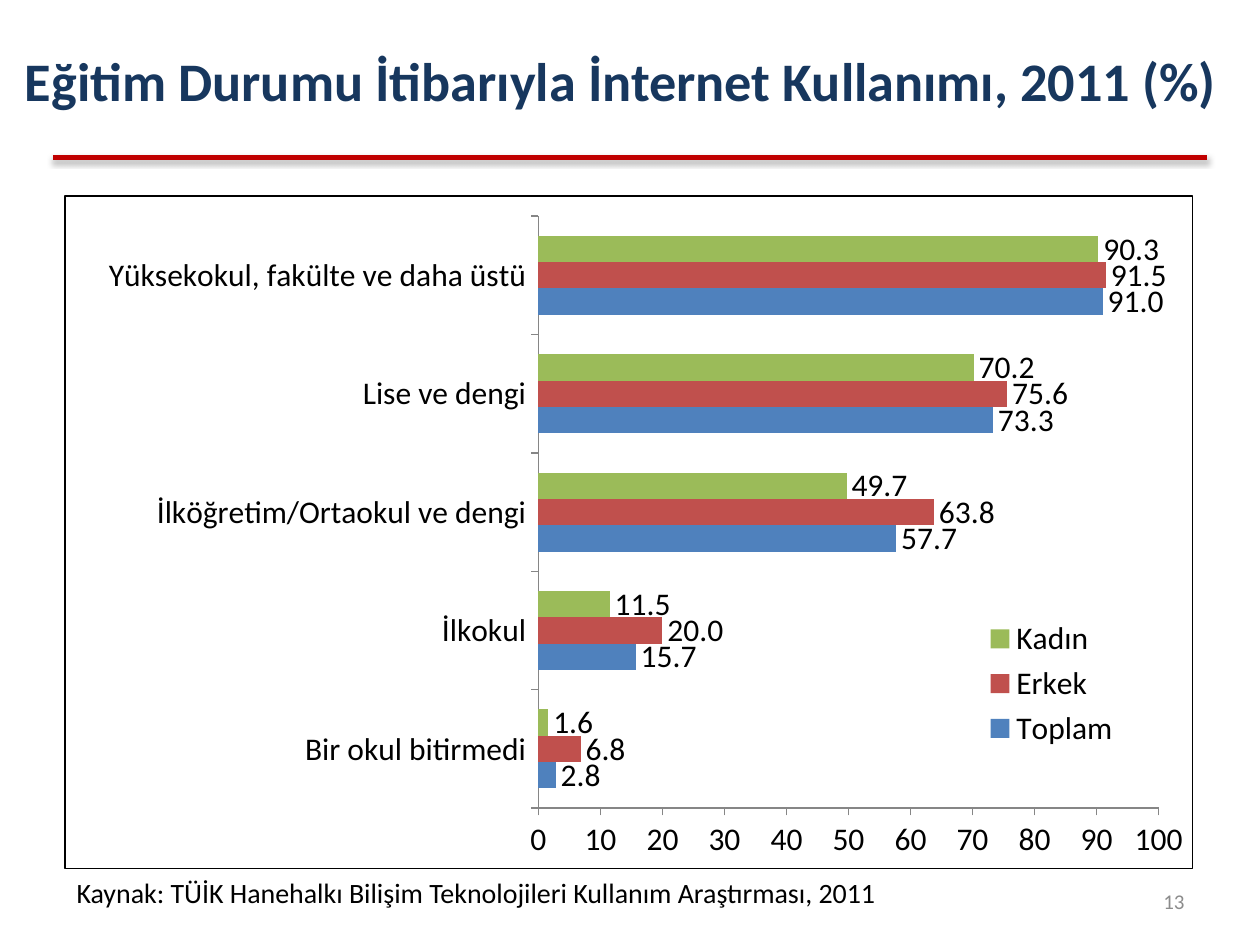
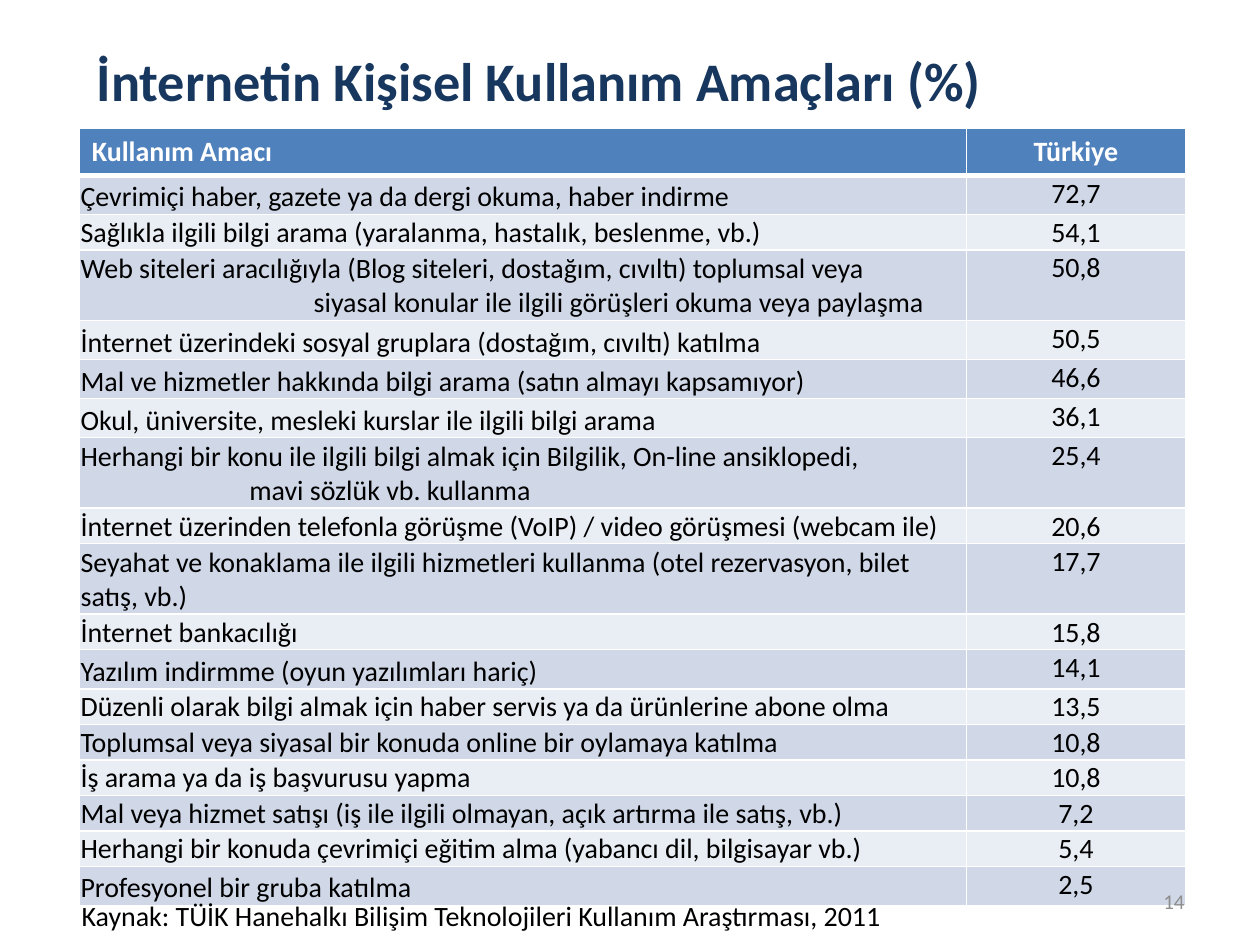
from typing import NamedTuple

from lxml.etree import SubElement
from pptx import Presentation
from pptx.chart.data import CategoryChartData
from pptx.dml.color import RGBColor
from pptx.enum.chart import XL_CHART_TYPE, XL_LABEL_POSITION, XL_LEGEND_POSITION, XL_TICK_MARK
from pptx.enum.shapes import MSO_CONNECTOR
from pptx.enum.text import MSO_ANCHOR, PP_ALIGN
from pptx.oxml import parse_xml
from pptx.oxml.ns import nsdecls, qn
from pptx.util import Inches, Pt

FONT = "Calibri"
WHITE = RGBColor(0xFF, 0xFF, 0xFF)
BLACK = RGBColor(0x00, 0x00, 0x00)
NAVY = RGBColor(0x17, 0x37, 0x5E)
GRAY = RGBColor(0x8C, 0x8C, 0x8C)
AXIS_GRAY = RGBColor(0x86, 0x86, 0x86)
RED = RGBColor(0xC0, 0x00, 0x00)
BLUE = RGBColor(0x4F, 0x81, 0xBD)
BRICK = RGBColor(0xC0, 0x50, 0x4D)
GREEN = RGBColor(0x9B, 0xBB, 0x59)
BANDS = (RGBColor(0xD0, 0xD8, 0xE8), RGBColor(0xE9, 0xED, 0xF4))

SOURCE = "Kaynak: TÜİK Hanehalkı Bilişim Teknolojileri Kullanım Araştırması, 2011"
HEADER, TALL, SHORT, DOUBLE = 0.36, 0.31, 0.28, 0.56


class Box(NamedTuple):
    """A rectangle in inches."""

    left: float
    top: float
    width: float
    height: float

    def lengths(self) -> tuple:
        """Return the four sides as lengths."""
        return tuple(Inches(side) for side in self)


class Style(NamedTuple):
    """The look of a run and its paragraph."""

    size: float
    color: RGBColor
    bold: bool = False
    align: PP_ALIGN = PP_ALIGN.LEFT


class Group(NamedTuple):
    """One bar series."""

    name: str
    color: RGBColor
    values: tuple


class Purpose(NamedTuple):
    """One table row, with an optional indented second line."""

    text: str
    share: str
    height: float
    second_line: str = ""
    indent: float = 0


TITLE = Style(31, NAVY, True)
BODY = Style(16, BLACK)
FIGURE = Style(16, BLACK, align=PP_ALIGN.CENTER)
HEAD_LEFT = Style(16, WHITE, True)
HEAD_CENTER = Style(16, WHITE, True, PP_ALIGN.CENTER)
PAGE_NUMBER = Style(12, GRAY, align=PP_ALIGN.RIGHT)

EDUCATION_LEVELS = (
    "Bir okul bitirmedi",
    "İlkokul",
    "İlköğretim/Ortaokul ve dengi",
    "Lise ve dengi",
    "Yüksekokul, fakülte ve daha üstü",
)
GROUPS = (
    Group("Toplam", BLUE, (2.8, 15.7, 57.7, 73.3, 91)),
    Group("Erkek", BRICK, (6.8, 20, 63.8, 75.6, 91.5)),
    Group("Kadın", GREEN, (1.6, 11.5, 49.7, 70.2, 90.3)),
)
PURPOSES = (
    Purpose("Çevrimiçi haber, gazete ya da dergi okuma, haber indirme", "72,7", TALL),
    Purpose("Sağlıkla ilgili bilgi arama (yaralanma, hastalık, beslenme, vb.)", "54,1", SHORT),
    Purpose("Web siteleri aracılığıyla (Blog siteleri, dostağım, cıvıltı) toplumsal veya", "50,8", DOUBLE,
            "siyasal konular ile ilgili görüşleri okuma veya paylaşma", 1.85),
    Purpose("İnternet üzerindeki sosyal gruplara (dostağım, cıvıltı) katılma", "50,5", TALL),
    Purpose("Mal ve hizmetler hakkında bilgi arama (satın almayı kapsamıyor)", "46,6", TALL),
    Purpose("Okul, üniversite, mesleki kurslar ile ilgili bilgi arama", "36,1", TALL),
    Purpose("Herhangi bir konu ile ilgili bilgi almak için Bilgilik, On-line ansiklopedi,", "25,4", DOUBLE,
            "mavi sözlük vb. kullanma", 1.34),
    Purpose("İnternet üzerinden telefonla görüşme (VoIP) / video görüşmesi (webcam ile)", "20,6", SHORT),
    Purpose("Seyahat ve konaklama ile ilgili hizmetleri kullanma (otel rezervasyon, bilet satış, vb.)", "17,7", DOUBLE),
    Purpose("İnternet bankacılığı", "15,8", SHORT),
    Purpose("Yazılım indirmme (oyun yazılımları hariç)", "14,1", TALL),
    Purpose("Düzenli olarak bilgi almak için haber servis ya da ürünlerine abone olma", "13,5", SHORT),
    Purpose("Toplumsal veya siyasal bir konuda online bir oylamaya katılma", "10,8", SHORT),
    Purpose("İş arama ya da iş başvurusu yapma", "10,8", SHORT),
    Purpose("Mal veya hizmet satışı (iş ile ilgili olmayan, açık artırma ile satış, vb.)", "7,2", SHORT),
    Purpose("Herhangi bir konuda çevrimiçi eğitim alma (yabancı dil, bilgisayar vb.)", "5,4", SHORT),
    Purpose("Profesyonel bir gruba katılma", "2,5", TALL),
)


def write(paragraph, text: str, style: Style) -> None:
    """Add one styled run to a paragraph."""
    paragraph.alignment = style.align
    run = paragraph.add_run()
    run.text = text
    run.font.name = FONT
    run.font.size = Pt(style.size)
    run.font.bold = style.bold
    run.font.color.rgb = style.color


def add_text(slide, box: Box, text: str, style: Style, anchor: MSO_ANCHOR = MSO_ANCHOR.MIDDLE) -> None:
    """Add a wrapped text box."""
    frame = slide.shapes.add_textbox(*box.lengths()).text_frame
    frame.word_wrap = True
    frame.vertical_anchor = anchor
    write(frame.paragraphs[0], text, style)


def add_frame_texts(slide, title: str, title_box: Box, source_box: Box, number: int) -> None:
    """Add the title, the source line and the page number."""
    add_text(slide, title_box, title, TITLE)
    add_text(slide, source_box, SOURCE, BODY, MSO_ANCHOR.TOP)
    add_text(slide, Box(7.17, 6.95, 2.33, 0.4), str(number), PAGE_NUMBER)


def add_title_rule(slide) -> None:
    """Draw the red rule and its soft shadow."""
    height = Inches(1.25)
    rule = slide.shapes.add_connector(MSO_CONNECTOR.STRAIGHT, Inches(0.42), height, Inches(9.58), height)
    rule.line.color.rgb = RED
    rule.line.width = Pt(3)
    rule.element.spPr.append(parse_xml(
        f'<a:effectLst {nsdecls("a")}><a:outerShdw blurRad="{Pt(3.1)}" dist="{Pt(1.8)}" dir="5400000" '
        'rotWithShape="0"><a:srgbClr val="000000"><a:alpha val="35000"/></a:srgbClr>'
        '</a:outerShdw></a:effectLst>'))


def set_layout(element, index: int, box: Box, target: str = "") -> None:
    """Place a chart part by fractions of the chart's size."""
    for layout in element.findall(qn("c:layout")):
        element.remove(layout)
    layout = parse_xml(f'<c:layout {nsdecls("c")}><c:manualLayout/></c:layout>')
    settings = [("layoutTarget", target)] if target else []
    settings += [("xMode", "edge"), ("yMode", "edge"), *zip("xywh", box)]
    for name, value in settings:
        SubElement(layout[0], qn(f"c:{name}")).set("val", str(value))
    element.insert(index, layout)


def add_usage_chart(slide) -> None:
    """Add the clustered bars of internet use by education."""
    data = CategoryChartData(number_format="0.0")
    data.categories = EDUCATION_LEVELS
    for group in GROUPS:
        data.add_series(group.name, group.values)
    box = Box(0.51, 1.55, 8.96, 5.35)
    chart = slide.shapes.add_chart(XL_CHART_TYPE.BAR_CLUSTERED, *box.lengths(), data).chart
    chart.has_title = False
    chart.font.name = FONT
    chart.font.size = Pt(18)
    chart.font.color.rgb = BLACK

    plot = chart.plots[0]
    plot.gap_width = 150
    plot.vary_by_categories = False
    for series, group in zip(plot.series, GROUPS):
        series.format.fill.solid()
        series.format.fill.fore_color.rgb = group.color
        labels = series.data_labels
        labels.show_value = True
        labels.number_format = "0.0"
        labels.number_format_is_linked = False
        labels.position = XL_LABEL_POSITION.OUTSIDE_END

    for axis in (chart.category_axis, chart.value_axis):
        axis.has_major_gridlines = False
        axis.major_tick_mark = XL_TICK_MARK.OUTSIDE
        axis.minor_tick_mark = XL_TICK_MARK.NONE
        axis.format.line.color.rgb = AXIS_GRAY
        axis.format.line.width = Pt(0.75)
    chart.value_axis.minimum_scale = 0
    chart.value_axis.maximum_scale = 100
    chart.value_axis.major_unit = 10
    chart.value_axis.tick_labels.number_format = "0"
    chart.value_axis.tick_labels.number_format_is_linked = False

    chart.has_legend = True
    chart.legend.position = XL_LEGEND_POSITION.RIGHT
    chart.legend.include_in_layout = False
    chart_part = chart.element.find(qn("c:chart"))
    set_layout(chart_part.find(qn("c:plotArea")), 0, Box(0.42, 0.03, 0.55, 0.88), "inner")
    set_layout(chart_part.find(qn("c:legend")), 1, Box(0.81, 0.62, 0.13, 0.21))
    chart_part.addnext(parse_xml(
        f'<c:spPr {nsdecls("c", "a")}><a:noFill/><a:ln w="{Pt(0.75)}"><a:solidFill>'
        f'<a:srgbClr val="{BLACK}"/></a:solidFill></a:ln></c:spPr>'))


def style_cell(cell, fill: RGBColor, anchor: MSO_ANCHOR, bottom_border: float = 1) -> None:
    """Give a cell its white borders, fill and anchor."""
    cell.vertical_anchor = anchor
    properties = cell._tc.get_or_add_tcPr()
    for side, width in (("L", 1), ("R", 1), ("T", 1), ("B", bottom_border)):
        properties.append(parse_xml(
            f'<a:ln{side} {nsdecls("a")} w="{Pt(width)}"><a:solidFill>'
            f'<a:srgbClr val="{WHITE}"/></a:solidFill></a:ln{side}>'))
    cell.fill.solid()
    cell.fill.fore_color.rgb = fill


def set_margins(cell, side: float) -> None:
    """Set all margins but the bottom one, which is zero."""
    cell.margin_left = cell.margin_right = cell.margin_top = Inches(side)
    cell.margin_bottom = Inches(0)


def add_purpose_table(slide) -> None:
    """Add the table of purposes and shares."""
    heights = [HEADER, *(purpose.height for purpose in PURPOSES)]
    box = Box(0.63, 1.02, 8.78, sum(heights))
    table = slide.shapes.add_table(len(heights), 2, *box.lengths()).table
    for column, width in zip(table.columns, (7.04, 1.74)):
        column.width = Inches(width)
    for row, height in zip(table.rows, heights):
        row.height = Inches(height)

    purpose_head, share_head = table.rows[0].cells
    style_cell(purpose_head, BLUE, MSO_ANCHOR.TOP, 3)
    write(purpose_head.text_frame.paragraphs[0], "Kullanım Amacı", HEAD_LEFT)
    style_cell(share_head, BLUE, MSO_ANCHOR.MIDDLE, 3)
    set_margins(share_head, 0)
    write(share_head.text_frame.paragraphs[0], "Türkiye", HEAD_CENTER)

    for index, purpose in enumerate(PURPOSES):
        text_cell, share_cell = table.rows[index + 1].cells
        for cell, anchor in ((text_cell, MSO_ANCHOR.BOTTOM), (share_cell, MSO_ANCHOR.TOP)):
            style_cell(cell, BANDS[index % 2], anchor, 3 if cell is None else 1)
            set_margins(cell, 0.01)
        write(text_cell.text_frame.paragraphs[0], purpose.text, BODY)
        write(share_cell.text_frame.paragraphs[0], purpose.share, FIGURE)
        if purpose.second_line:
            paragraph = text_cell.text_frame.add_paragraph()
            write(paragraph, purpose.second_line, BODY)
            paragraph._p.get_or_add_pPr().set("marL", str(Inches(purpose.indent)))


def main() -> None:
    """Build both slides and save them."""
    presentation = Presentation()
    presentation.slide_width = Inches(10)
    presentation.slide_height = Inches(7.5)
    blank = presentation.slide_layouts[6]

    slide = presentation.slides.add_slide(blank)
    add_usage_chart(slide)
    add_frame_texts(slide, "Eğitim Durumu İtibarıyla İnternet Kullanımı, 2011 (%)",
                    Box(0.1, 0.36, 9.7, 0.55), Box(0.51, 6.9, 8.76, 0.37), 13)
    add_title_rule(slide)

    slide = presentation.slides.add_slide(blank)
    add_purpose_table(slide)
    add_frame_texts(slide, "İnternetin Kişisel Kullanım Amaçları (%)",
                    Box(0.67, 0.36, 8.5, 0.55), Box(0.55, 7.08, 8.76, 0.37), 14)
    presentation.save("out.pptx")


if __name__ == "__main__":
    main()
